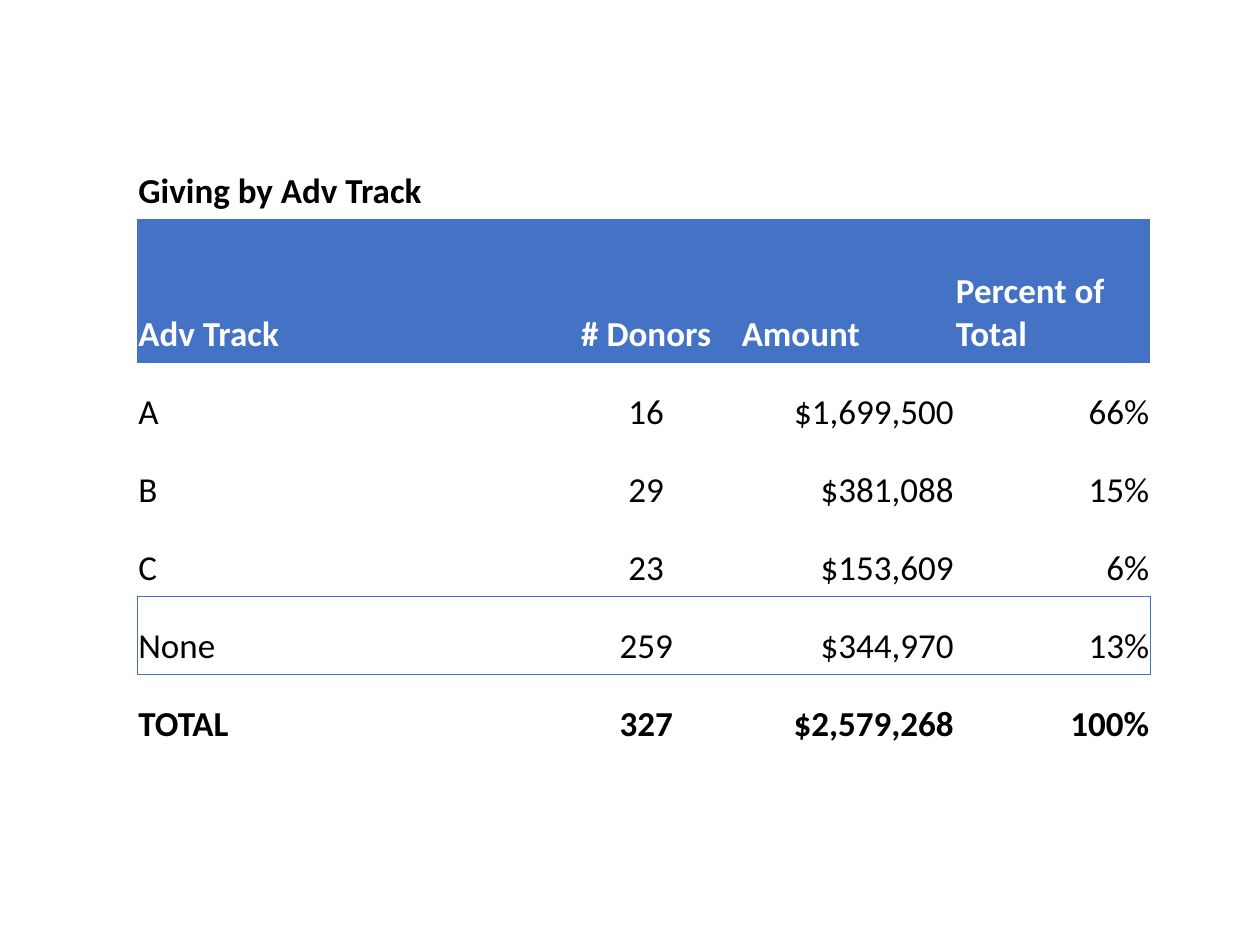
from pptx import Presentation
from pptx.dml.color import RGBColor as RGB
from pptx.enum.text import MSO_ANCHOR, PP_ALIGN
from pptx.oxml import parse_xml
from pptx.oxml.ns import nsdecls, qn
from pptx.util import Pt

COLORS = {"header": "4472C4", "white": "FFFFFF", "text": "000000"}
NO_GRID_STYLE = "{2D5ABB26-0587-4C30-8999-92F81FD0307C}"
ROWS = [
    ["Giving by Adv Track", "", "", ""],
    ["Adv Track", "# Donors", "Amount", "Percent of Total"],
    ["A", "16", "$1,699,500", "66%"],
    ["B", "29", "$381,088", "15%"],
    ["C", "23", "$153,609", "6%"],
    ["None", "259", "$344,970", "13%"],
    ["TOTAL", "327", "$2,579,268", "100%"],
]
COL_WIDTHS = [236.8, 108, 122.4, 111.6]
ROW_HEIGHT, HEADER_HEIGHT = 44.6, 82
HEADER, NONE, TOTAL = 1, 5, 6
ALIGNS = [PP_ALIGN.LEFT, PP_ALIGN.CENTER, PP_ALIGN.RIGHT, PP_ALIGN.RIGHT]


def add_border(cell, side):
    line = parse_xml(
        f'<a:ln{side} {nsdecls("a")} w="{Pt(0.5)}"><a:solidFill>'
        f'<a:srgbClr val="{COLORS["header"]}"/></a:solidFill></a:ln{side}>'
    )
    tcPr = cell._tc.get_or_add_tcPr()
    tcPr.insert(len(tcPr.findall("*")) - 1, line)


prs = Presentation()
prs.slide_width, prs.slide_height = Pt(720), Pt(540)
s = prs.slides.add_slide(prs.slide_layouts[6])

height = ROW_HEIGHT * (len(ROWS) - 1) + HEADER_HEIGHT
frame = s.shapes.add_table(len(ROWS), len(COL_WIDTHS), Pt(78.5), Pt(80.6),
                           Pt(sum(COL_WIDTHS)), Pt(height))
table = frame.table
table.first_row = False
table.horz_banding = False
table._tbl.tblPr.find(qn("a:tableStyleId")).text = NO_GRID_STYLE

for column, width in zip(table.columns, COL_WIDTHS):
    column.width = Pt(width)

for i, values in enumerate(ROWS):
    table.rows[i].height = Pt(HEADER_HEIGHT if i == HEADER else ROW_HEIGHT)
    for j, value in enumerate(values):
        cell = table.cell(i, j)
        cell.margin_left = cell.margin_right = cell.margin_top = Pt(0.6)
        cell.margin_bottom = Pt(3.6)
        cell.vertical_anchor = MSO_ANCHOR.BOTTOM
        if i == HEADER:
            cell.fill.solid()
            cell.fill.fore_color.rgb = RGB.from_string(COLORS["header"])
        else:
            cell.fill.background()

        if i == NONE:
            if j == 0:
                add_border(cell, "L")
            if j == len(values) - 1:
                add_border(cell, "R")
            add_border(cell, "T")
        elif i == NONE - 1:
            add_border(cell, "B")

        if not value:
            continue
        p = cell.text_frame.paragraphs[0]
        p.alignment = PP_ALIGN.LEFT if i == HEADER and j > 1 else ALIGNS[j]
        r = p.add_run()
        r.text = value
        r.font.name = "Calibri"
        r.font.size = Pt(20)
        r.font.bold = i <= HEADER or i == TOTAL
        r.font.color.rgb = RGB.from_string(COLORS["white" if i == HEADER else "text"])

prs.save("out.pptx")
